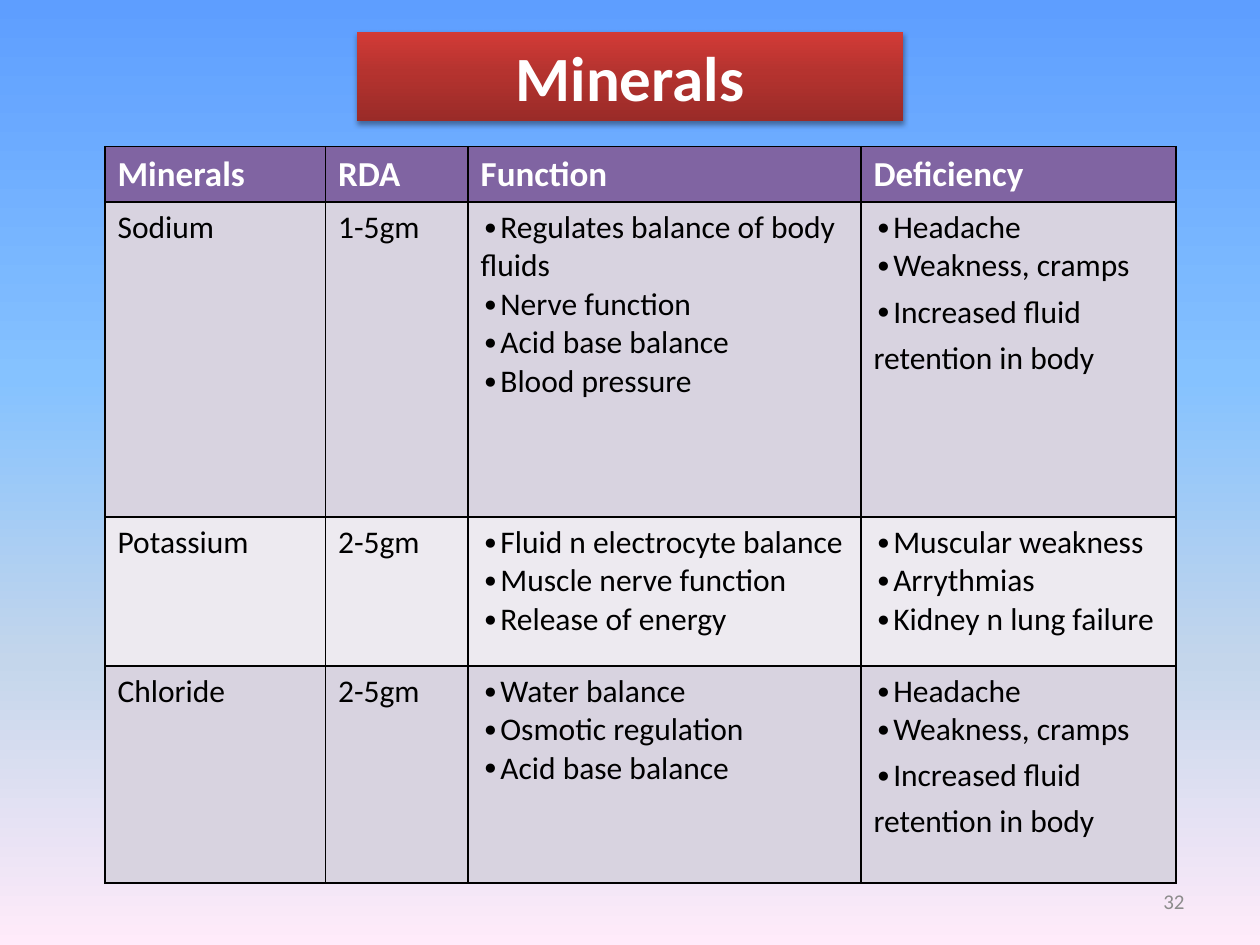
import pptx
import pptx.util
import pptx.dml.color
import pptx.enum.text
import pptx.oxml
import pptx.oxml.ns
from pptx.util import Pt
from lxml import etree

ALIGN = pptx.enum.text.PP_ALIGN
ANCHOR = pptx.enum.text.MSO_ANCHOR
AUTO_SIZE = pptx.enum.text.MSO_AUTO_SIZE
qn = pptx.oxml.ns.qn

THEME = {
    "font": "Calibri",
    "title_size": 36, "header_size": 20, "body_size": 18, "number_size": 12,
    "light": "FFFFFF", "dark": "000000", "muted": "8C8C8C",
    "header": "8064A2", "bands": ["D8D3E0", "EDEAF0"],
    "sky": [(0, "5E9EFF"), (40, "85C2FF"), (70, "C4D6EB"), (100, "FFEBFA")],
    "red": [(0, "9A2B28"), (55, "B5332F"), (100, "D33B37")],
}

TITLE = "Minerals"
PAGE = "32"
HEADERS = ["Minerals", "RDA", "Function", "Deficiency"]
LOW_SALT = ["Headache", "Weakness, cramps", "Increased fluid retention in body"]
MINERALS = [
    ("Sodium", "1-5gm",
     ["Regulates balance of body fluids", "Nerve function",
      "Acid base balance", "Blood pressure"], LOW_SALT),
    ("Potassium", "2-5gm",
     ["Fluid n electrocyte balance", "Muscle nerve function", "Release of energy"],
     ["Muscular weakness", "Arrythmias", "Kidney n lung failure"]),
    ("Chloride", "2-5gm",
     ["Water balance", "Osmotic regulation", "Acid base balance"], LOW_SALT),
]
LOOSE_LINES = {LOW_SALT[-1]: 1.2}

TITLE_BOX = (204, 18, 312, 51)
TABLE_AT = (60, 83.8)
COLUMNS = [126, 81.5, 224.5, 180]
ROWS = [31.5, 180, 85, 124]
NUMBER_BOX = (516, 500.5, 168, 29)


def rgb(value):
    return pptx.dml.color.RGBColor.from_string(value)


def add_xml(parent, tag, **attributes):
    child = etree.SubElement(parent, qn(tag))
    for name, value in attributes.items():
        child.set(name, str(value))
    return child


def set_gradient(fill, element, stops, angle):
    """Fill with (percent, colour) stops; angle runs counter-clockwise."""
    fill.gradient()
    fill.gradient_angle = angle
    stop_list = next(element.iter(qn("a:gsLst")))
    for old in list(stop_list):
        stop_list.remove(old)
    for percent, colour in stops:
        stop = add_xml(stop_list, "a:gs", pos=percent * 1000)
        add_xml(stop, "a:srgbClr", val=colour)


def add_shadow(sp):
    sp.shadow.inherit = False
    effects = sp.element.spPr.find(qn("a:effectLst"))
    shadow = add_xml(effects, "a:outerShdw", blurRad=Pt(3.1), dist=Pt(2),
                     dir=90 * 60000, rotWithShape=0)
    colour = add_xml(shadow, "a:srgbClr", val="000000")
    add_xml(colour, "a:alpha", val=38000)


def write(tf, text, size, color, bold=False, align=ALIGN.LEFT, bullet=None):
    """Write a string, or a list with one paragraph for each item."""
    lines = [text] if isinstance(text, str) else text
    for i, line in enumerate(lines):
        p = tf.add_paragraph() if i else tf.paragraphs[0]
        p.alignment = align
        if line in LOOSE_LINES:
            p.line_spacing = LOOSE_LINES[line]
        if bullet:
            pPr = p._p.get_or_add_pPr()
            pPr.set("marL", "0")
            pPr.set("indent", "0")
            add_xml(pPr, "a:buFont", typeface=THEME["font"])
            add_xml(pPr, "a:buChar", char=bullet)
        r = p.add_run()
        r.text = line
        r.font.name = THEME["font"]
        r.font.size = Pt(size)
        r.font.bold = bold
        r.font.color.rgb = rgb(color)


def set_borders(cell):
    tcPr = cell._tc.get_or_add_tcPr()
    for i, side in enumerate(("a:lnL", "a:lnR", "a:lnT", "a:lnB")):
        line = add_xml(tcPr, side, w=Pt(1))
        add_xml(add_xml(line, "a:solidFill"), "a:srgbClr", val=THEME["dark"])
        tcPr.insert(i, line)


def add_title(s):
    sp = s.shapes.title
    sp.left, sp.top, sp.width, sp.height = map(Pt, TITLE_BOX)
    set_gradient(sp.fill, sp.element, THEME["red"], 90)
    add_shadow(sp)
    tf = sp.text_frame
    tf.word_wrap = True
    tf.auto_size = AUTO_SIZE.NONE
    tf.vertical_anchor = ANCHOR.MIDDLE
    write(tf, TITLE, THEME["title_size"], THEME["light"], bold=True, align=ALIGN.CENTER)


def add_mineral_table(s):
    frame = s.shapes.add_table(len(ROWS), len(COLUMNS), *map(Pt, TABLE_AT),
                               Pt(sum(COLUMNS)), Pt(sum(ROWS)))
    table = frame.table
    for column, width in zip(table.columns, COLUMNS):
        column.width = Pt(width)
    for row, height in zip(table.rows, ROWS):
        row.height = Pt(height)
    for i, texts in enumerate([HEADERS, *MINERALS]):
        for j, text in enumerate(texts):
            cell = table.cell(i, j)
            cell.fill.solid()
            if i == 0:
                cell.fill.fore_color.rgb = rgb(THEME["header"])
                write(cell.text_frame, text, THEME["header_size"], THEME["light"], bold=True)
            else:
                cell.fill.fore_color.rgb = rgb(THEME["bands"][(i - 1) % 2])
                write(cell.text_frame, text, THEME["body_size"], THEME["dark"],
                      bullet="∙" if isinstance(text, list) else None)
            set_borders(cell)


def add_page_number(s):
    tf = s.shapes.add_textbox(*map(Pt, NUMBER_BOX)).text_frame
    tf.word_wrap = True
    tf.vertical_anchor = ANCHOR.MIDDLE
    write(tf, PAGE, THEME["number_size"], THEME["muted"], align=ALIGN.RIGHT)


def main():
    prs = pptx.Presentation()
    prs.slide_width, prs.slide_height = Pt(720), Pt(540)
    s = prs.slides.add_slide(prs.slide_layouts[5])
    set_gradient(s.background.fill, s.element, THEME["sky"], 270)
    add_title(s)
    add_mineral_table(s)
    add_page_number(s)
    prs.save("out.pptx")


if __name__ == "__main__":
    main()
